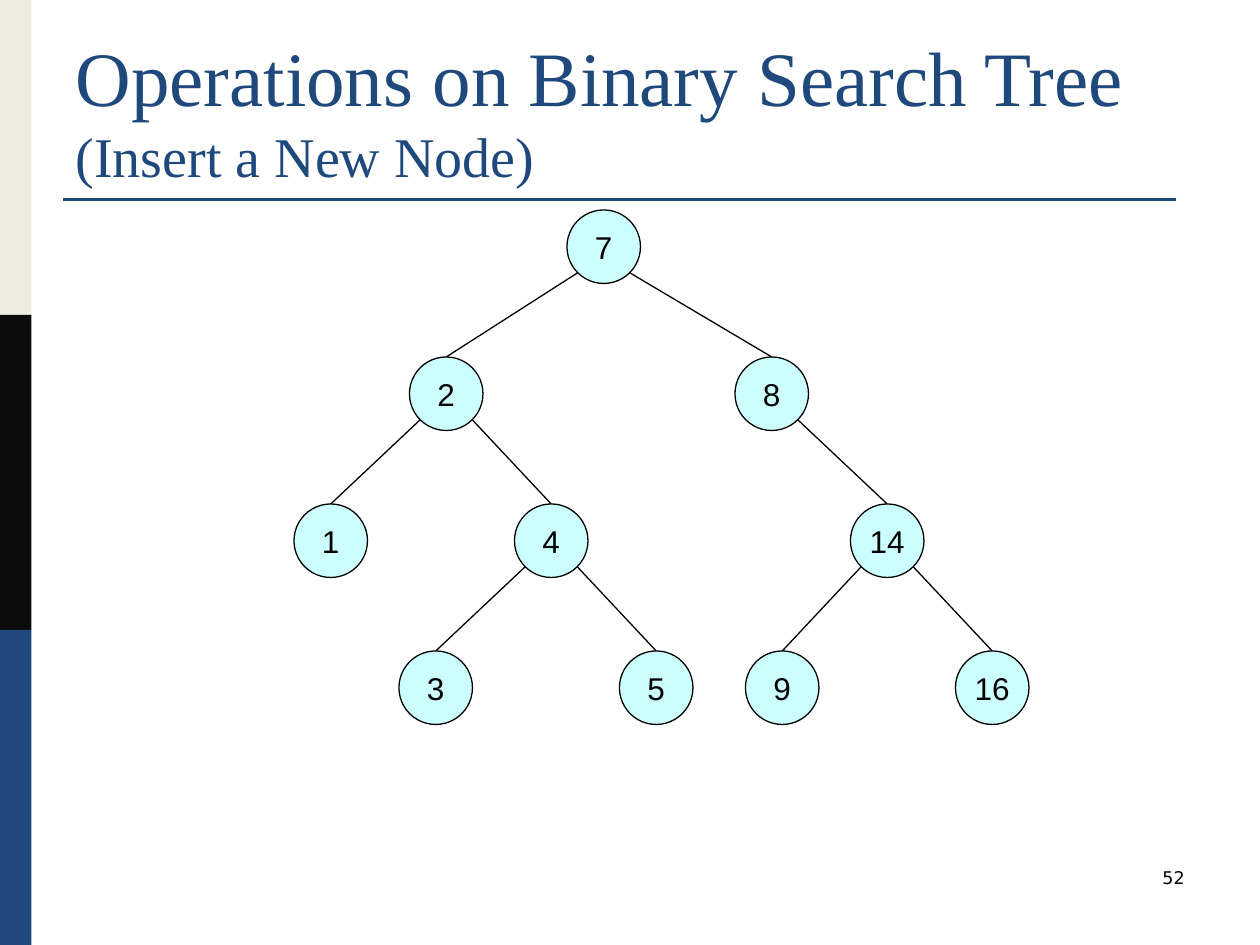
from dataclasses import dataclass
from math import sqrt

from lxml import etree
from pptx import Presentation
from pptx.dml.color import RGBColor
from pptx.enum.shapes import MSO_CONNECTOR, MSO_SHAPE
from pptx.enum.text import MSO_ANCHOR, MSO_AUTO_SIZE, PP_ALIGN
from pptx.oxml.ns import qn
from pptx.util import Inches, Pt

RECTANGLE, OVAL = MSO_SHAPE.RECTANGLE, MSO_SHAPE.OVAL
STRAIGHT = MSO_CONNECTOR.STRAIGHT
LEFT, CENTER, RIGHT = PP_ALIGN.LEFT, PP_ALIGN.CENTER, PP_ALIGN.RIGHT
TOP, MIDDLE, BOTTOM = MSO_ANCHOR.TOP, MSO_ANCHOR.MIDDLE, MSO_ANCHOR.BOTTOM
FIXED_SIZE = MSO_AUTO_SIZE.NONE
TITLE_ONLY = 5
TOP_SITE = 0


@dataclass(frozen=True)
class Theme:
    navy: str = "1F497D"
    cream: str = "EEECE1"
    black: str = "000000"
    charcoal: str = "0C0C0C"
    aqua: str = "CCFFFF"
    title_font: str = "Times New Roman"
    node_font: str = "Arial"
    number_font: str = "DejaVu Sans"
    title_size: int = 44
    subtitle_size: int = 32
    node_size: int = 18
    number_size: int = 10
    rule_width: float = 1.5
    edge_width: float = 0.75


THEME = Theme()
SLIDE_WIDTH, SLIDE_HEIGHT = Inches(10), Inches(7.5)
UNIT = SLIDE_WIDTH / 120
BAR_WIDTH, BAR_HEIGHT = 3, 30
NODE_DIAMETER, FIRST_LEVEL, LEVEL_STEP = 7, 20, 14

# value: (column, level, parent)
TREE = {
    "7": (54, 0, None),
    "2": (39, 1, "7"),
    "8": (70, 1, "7"),
    "1": (28, 2, "2"),
    "4": (49, 2, "2"),
    "14": (81, 2, "8"),
    "3": (38, 3, "4"),
    "5": (59, 3, "4"),
    "9": (71, 3, "14"),
    "16": (91, 3, "14"),
}


def grid(*steps):
    return [round(step * UNIT) for step in steps]


def color(value):
    return RGBColor.from_string(value)


def apply_format(target, values):
    for name, value in values.items():
        setattr(target, name, value)


def write(paragraph, text, font_name, size, ink):
    run = paragraph.add_run()
    run.text = text
    apply_format(run.font, {"name": font_name, "size": Pt(size)})
    run.font.color.rgb = color(ink)


def add_filled(slide, preset, box, fill):
    figure = slide.shapes.add_shape(preset, *grid(*box))
    figure.shadow.inherit = False
    figure.fill.solid()
    figure.fill.fore_color.rgb = color(fill)
    figure.line.fill.background()
    return figure


def add_line(slide, start, end, ink, width):
    line = slide.shapes.add_connector(STRAIGHT, *grid(*start, *end))
    line.line.color.rgb = color(ink)
    line.line.width = Pt(width)
    etree.SubElement(line._element.spPr, qn("a:effectLst"))
    return line


def add_sidebar(slide):
    for row, fill in enumerate((THEME.cream, THEME.charcoal, THEME.navy)):
        add_filled(slide, RECTANGLE, (0, row * BAR_HEIGHT, BAR_WIDTH, BAR_HEIGHT), fill)


def add_title(slide, heading, subheading):
    title = slide.shapes.title
    left, top, width, height = grid(6, 3.6, 108, 15)
    apply_format(title, {"left": left, "top": top, "width": width, "height": height})
    apply_format(title.text_frame, {
        "vertical_anchor": BOTTOM, "word_wrap": True, "auto_size": FIXED_SIZE,
    })
    paragraph = title.text_frame.paragraphs[0]
    paragraph.alignment = LEFT
    write(paragraph, heading, THEME.title_font, THEME.title_size, THEME.navy)
    paragraph.add_line_break()
    write(paragraph, subheading, THEME.title_font, THEME.subtitle_size, THEME.navy)


def add_page_number(slide, number):
    frame = slide.shapes.add_textbox(*grid(86, 82, 28, 6)).text_frame
    apply_format(frame, {"word_wrap": True, "vertical_anchor": TOP})
    paragraph = frame.paragraphs[0]
    paragraph.alignment = RIGHT
    write(paragraph, number, THEME.number_font, THEME.number_size, THEME.black)


def level_top(level):
    return FIRST_LEVEL + level * LEVEL_STEP


def add_node(slide, value, column, level):
    box = (column, level_top(level), NODE_DIAMETER, NODE_DIAMETER)
    node = add_filled(slide, OVAL, box, THEME.aqua)
    node.line.color.rgb = color(THEME.black)
    node.line.width = Pt(THEME.edge_width)
    apply_format(node.text_frame, {"word_wrap": False, "vertical_anchor": MIDDLE})
    paragraph = node.text_frame.paragraphs[0]
    paragraph.alignment = CENTER
    write(paragraph, value, THEME.node_font, THEME.node_size, THEME.black)
    return node


def add_edge(slide, parent, child, child_node):
    parent_column, parent_level, _ = TREE[parent]
    child_column, child_level, _ = TREE[child]
    radius = NODE_DIAMETER / 2
    diagonal = radius / sqrt(2)
    side = 1 if child_column > parent_column else -1
    start = (parent_column + radius + side * diagonal,
             level_top(parent_level) + radius + diagonal)
    end = (child_column + radius, level_top(child_level))
    edge = add_line(slide, start, end, THEME.black, THEME.edge_width)
    edge.end_connect(child_node, TOP_SITE)


def add_tree(slide):
    for value, (column, level, parent) in TREE.items():
        node = add_node(slide, value, column, level)
        if parent:
            add_edge(slide, parent, value, node)


def main():
    deck = Presentation()
    apply_format(deck, {"slide_width": SLIDE_WIDTH, "slide_height": SLIDE_HEIGHT})
    slide = deck.slides.add_slide(deck.slide_layouts[TITLE_ONLY])
    add_sidebar(slide)
    add_line(slide, (6, 19), (112, 19), THEME.navy, THEME.rule_width)
    add_title(slide, "Operations on Binary Search Tree", "(Insert a New Node)")
    add_page_number(slide, "52")
    add_tree(slide)
    deck.save("out.pptx")


if __name__ == "__main__":
    main()
